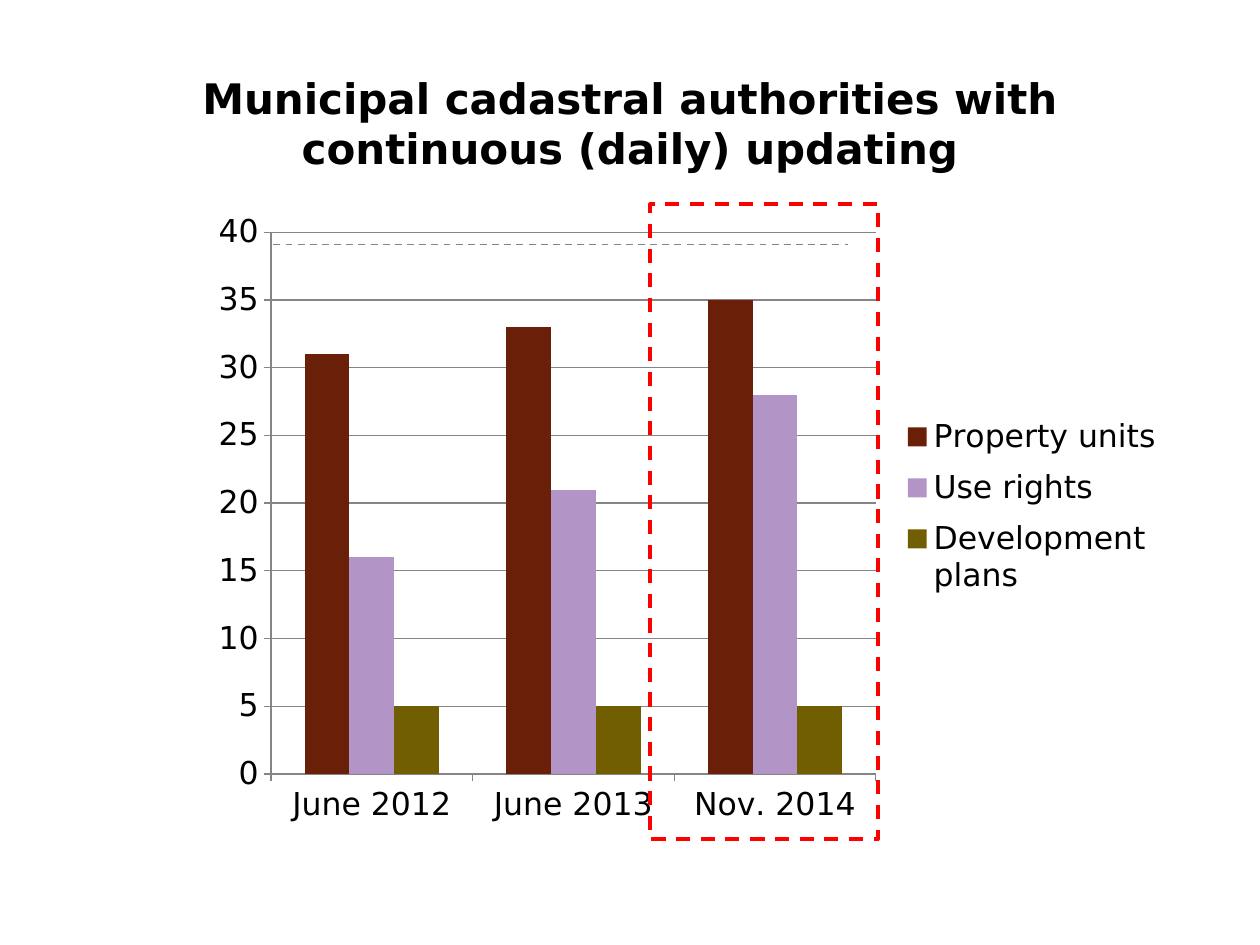
from lxml import etree
from pptx import Presentation
from pptx.chart.data import CategoryChartData
from pptx.dml.color import RGBColor
from pptx.enum.chart import XL_CHART_TYPE, XL_LEGEND_POSITION, XL_TICK_MARK
from pptx.enum.dml import MSO_LINE
from pptx.enum.shapes import MSO_CONNECTOR, MSO_SHAPE
from pptx.enum.text import MSO_ANCHOR, PP_ALIGN
from pptx.oxml import parse_xml
from pptx.oxml.ns import nsdecls, qn
from pptx.util import Inches, Pt

COLUMNS = XL_CHART_TYPE.COLUMN_CLUSTERED
LEGEND_RIGHT = XL_LEGEND_POSITION.RIGHT
TICK_OUTSIDE = XL_TICK_MARK.OUTSIDE
DASH = MSO_LINE.DASH
STRAIGHT = MSO_CONNECTOR.STRAIGHT
RECTANGLE = MSO_SHAPE.RECTANGLE
MIDDLE = MSO_ANCHOR.MIDDLE
CENTER = PP_ALIGN.CENTER

FONT = "DejaVu Sans"
COLORS = {
    "text": "000000",
    "grid": "858585",
    "highlight": "FF0000",
    "Property units": "6A1F09",
    "Use rights": "B294C6",
    "Development plans": "715E00",
}
CATEGORIES = ["June 2012", "June 2013", "Nov. 2014"]
SERIES = {
    "Property units": [31, 33, 35],
    "Use rights": [16, 21, 28],
    "Development plans": [5, 5, 5],
}


def color(name):
    return RGBColor.from_string(COLORS[name])


def format_font(font, size, bold=False):
    font.name = FONT
    font.size = Pt(size)
    font.bold = bold
    font.color.rgb = color("text")


def format_line(line, name, width, dash=None):
    line.color.rgb = color(name)
    line.width = Pt(width)
    if dash is not None:
        line.dash_style = dash


def set_text(shape, text, size=18, bold=False, align=CENTER, anchor=MIDDLE):
    frame = shape.text_frame
    frame.word_wrap = True
    frame.vertical_anchor = anchor
    paragraph = frame.paragraphs[0]
    paragraph.alignment = align
    run = paragraph.add_run()
    run.text = text
    format_font(run.font, size, bold)


def manual_layout(x, y, width, height, inner=False):
    """Chart layout element, in fractions of the chart frame."""
    target = '<c:layoutTarget val="inner"/>' if inner else ""
    return parse_xml(
        f'<c:layout {nsdecls("c")}><c:manualLayout>{target}'
        '<c:xMode val="edge"/><c:yMode val="edge"/>'
        f'<c:x val="{x}"/><c:y val="{y}"/><c:w val="{width}"/><c:h val="{height}"/>'
        "</c:manualLayout></c:layout>"
    )


def remove_layout(element):
    for layout in element.findall(qn("c:layout")):
        element.remove(layout)


def add_title(slide, left, top, width, height):
    title = slide.shapes.title
    title.left, title.top = Inches(left), Inches(top)
    title.width, title.height = Inches(width), Inches(height)
    set_text(title, "Municipal cadastral authorities with continuous (daily) updating",
             size=24, bold=True)


def add_column_chart(slide, left, top, width, height):
    data = CategoryChartData()
    data.categories = CATEGORIES
    for name, values in SERIES.items():
        data.add_series(name, values)
    chart = slide.shapes.add_chart(
        COLUMNS, Inches(left), Inches(top), Inches(width), Inches(height), data
    ).chart
    chart.has_title = False
    format_font(chart.font, 18)

    # Columns
    plot = chart.plots[0]
    plot.gap_width = 150
    plot.overlap = 0
    plot.vary_by_categories = False
    for series in plot.series:
        series.format.fill.solid()
        series.format.fill.fore_color.rgb = color(series.name)

    # Axes and gridlines
    value_axis = chart.value_axis
    value_axis.minimum_scale, value_axis.maximum_scale = 0, 40
    value_axis.major_unit = 5
    value_axis.has_major_gridlines = True
    format_line(value_axis.major_gridlines.format.line, "grid", 0.75)
    for axis in (chart.category_axis, value_axis):
        axis.major_tick_mark = TICK_OUTSIDE
        format_line(axis.format.line, "grid", 0.75)

    # Legend
    chart.has_legend = True
    legend = chart.legend
    legend.position = LEGEND_RIGHT
    legend.include_in_layout = False
    format_font(legend.font, 18)

    # Fixed places of the plot and the legend
    plot_area = chart.element.find(".//" + qn("c:plotArea"))
    remove_layout(plot_area)
    plot_area.insert(0, manual_layout(0.07, 0.05, 0.62, 0.85, inner=True))
    legend_element = chart.element.find(".//" + qn("c:legend"))
    remove_layout(legend_element)
    legend_element.find(qn("c:overlay")).addprevious(manual_layout(0.71, 0.32, 0.28, 0.32))


def add_target_line(slide, left, top, width):
    y = Inches(top)
    line = slide.shapes.add_connector(STRAIGHT, Inches(left), y, Inches(left + width), y)
    format_line(line.line, "grid", 1, DASH)
    etree.SubElement(line.element.spPr, qn("a:effectLst"))


def add_highlight(slide, left, top, width, height):
    frame = slide.shapes.add_shape(
        RECTANGLE, Inches(left), Inches(top), Inches(width), Inches(height)
    )
    frame.shadow.inherit = False
    frame.fill.background()
    format_line(frame.line, "highlight", 2, DASH)


def main():
    presentation = Presentation()
    presentation.slide_width, presentation.slide_height = Inches(10), Inches(7.5)
    slide = presentation.slides.add_slide(presentation.slide_layouts[5])
    add_title(slide, 0.67, 0.52, 8.66, 0.91)
    add_column_chart(slide, 1.61, 1.59, 7.74, 5.06)
    add_target_line(slide, 2.17, 1.94, 4.56)
    add_highlight(slide, 5.16, 1.62, 1.81, 5.04)
    presentation.save("out.pptx")


if __name__ == "__main__":
    main()
